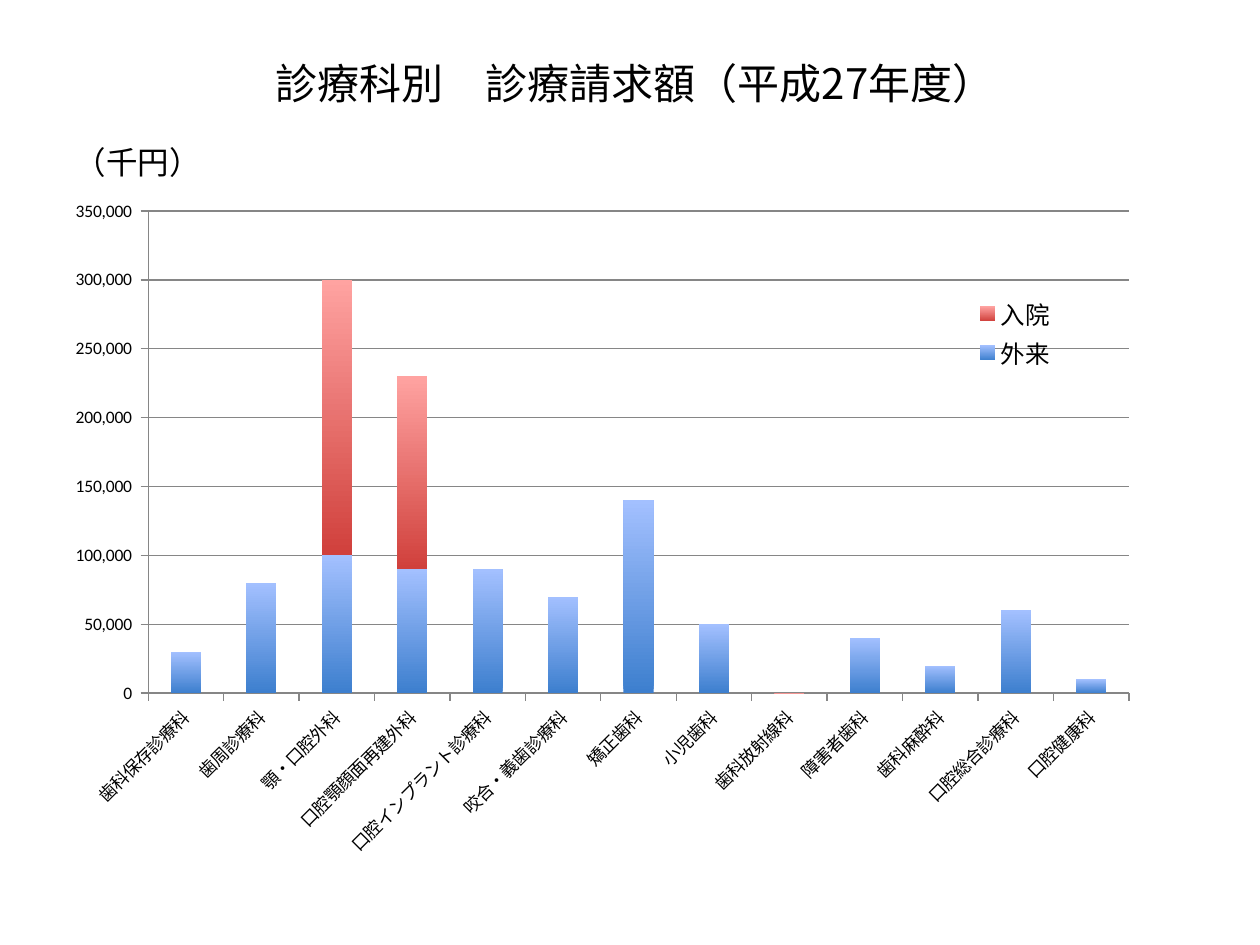
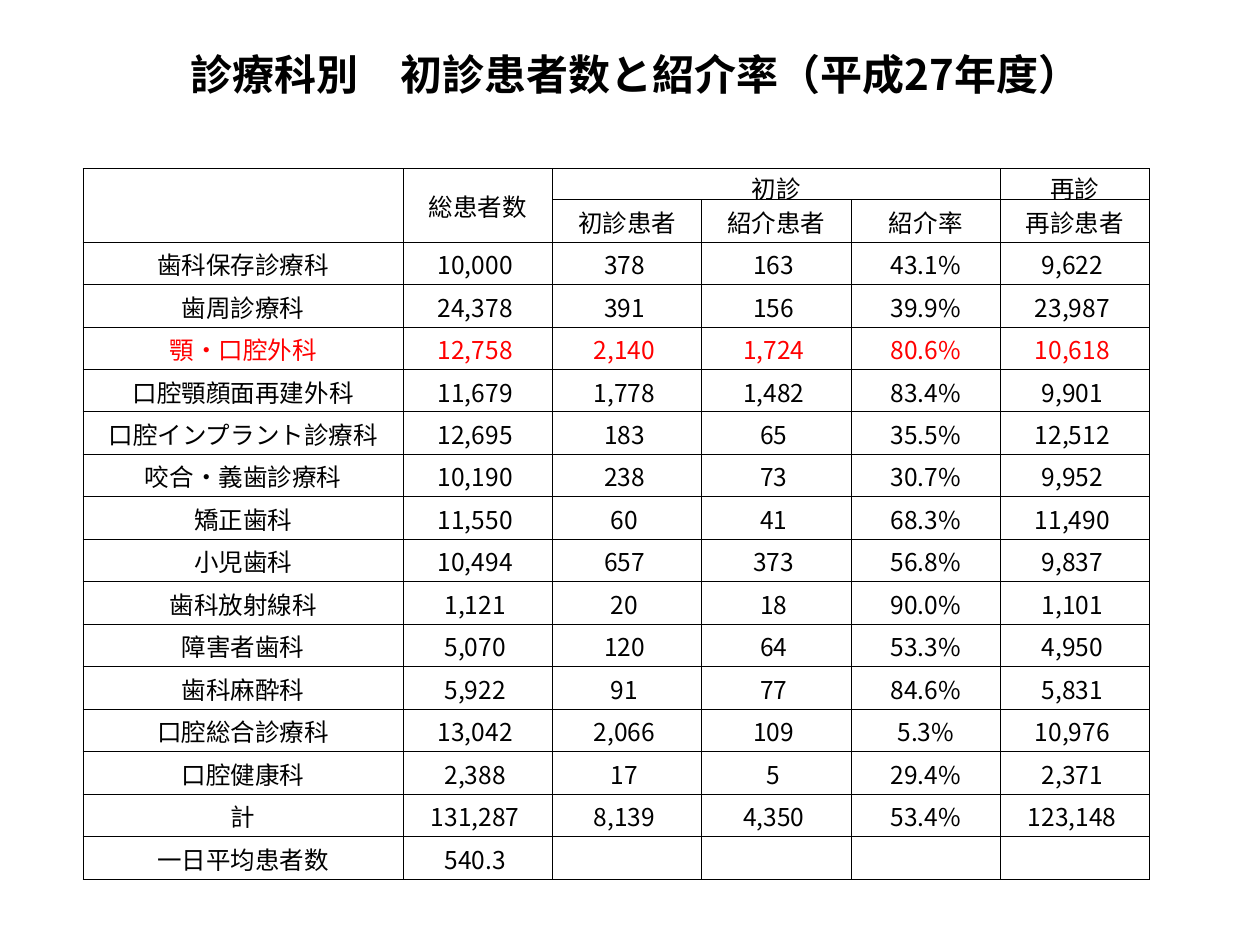
from typing import Any, NamedTuple

from lxml import etree
from pptx import Presentation
from pptx import util as u
from pptx.chart import data as cd
from pptx.dml import color as dml
from pptx.enum import chart as ch
from pptx.enum import text
from pptx.oxml import ns

Pt = u.Pt
JP_FONT = "Noto Sans CJK JP"
BLACK, RED, GRAY = "000000", "FF0000", "868686"
HIGHLIGHTED = "顎・口腔外科"
HEADERS = (
    ("", "総患者数", "初診", "", "", "再診"),
    ("", "", "初診患者", "紹介患者", "紹介率", "再診患者"),
)
MERGES = ((0, 0, 1, 0), (0, 1, 1, 1), (0, 2, 0, 4))


class Label(NamedTuple):
    """A line of text with its place in points."""

    words: str
    left: float
    top: float
    width: float
    height: float
    size: float = 24
    font: str = JP_FONT
    bold: bool = False
    centred: bool = True


class Department(NamedTuple):
    """Patient counts and billing in thousand yen of one department."""

    name: str
    first: int
    referred: int
    repeat: int
    outpatient: int = 0
    inpatient: int = 0


class Series(NamedTuple):
    """A chart series with its gradient from bottom to top."""

    name: str
    values: list[int]
    bottom: str
    top: str


DEPARTMENTS = (
    Department("歯科保存診療科", 378, 163, 9622, 30000),
    Department("歯周診療科", 391, 156, 23987, 80000),
    Department("顎・口腔外科", 2140, 1724, 10618, 100000, 200000),
    Department("口腔顎顔面再建外科", 1778, 1482, 9901, 90000, 140000),
    Department("口腔インプラント診療科", 183, 65, 12512, 90000),
    Department("咬合・義歯診療科", 238, 73, 9952, 70000),
    Department("矯正歯科", 60, 41, 11490, 140000),
    Department("小児歯科", 657, 373, 9837, 50000),
    Department("歯科放射線科", 20, 18, 1101),
    Department("障害者歯科", 120, 64, 4950, 40000),
    Department("歯科麻酔科", 91, 77, 5831, 20000),
    Department("口腔総合診療科", 2066, 109, 10976, 60000),
    Department("口腔健康科", 17, 5, 2371, 10000),
)


def rgb(value: str) -> dml.RGBColor:
    """Turn a hex string into a colour."""
    return dml.RGBColor.from_string(value)


def style_run(r: Any, size: float, font: str, colour: str, bold: bool = False) -> None:
    """Format a run, for East Asian letters as well."""
    r.font.size, r.font.name, r.font.bold = Pt(size), font, bold
    r.font.color.rgb = rgb(colour)
    etree.SubElement(r.font._element, ns.qn("a:ea")).set("typeface", font)


def add_label(slide: Any, label: Label) -> None:
    """Draw a text box."""
    sp = slide.shapes.add_textbox(
        Pt(label.left), Pt(label.top), Pt(label.width), Pt(label.height)
    )
    tf = sp.text_frame
    tf.text = label.words
    tf.word_wrap = label.centred
    tf.auto_size = text.MSO_AUTO_SIZE.SHAPE_TO_FIT_TEXT
    p = tf.paragraphs[0]
    p.alignment = text.PP_ALIGN.CENTER if label.centred else text.PP_ALIGN.LEFT
    style_run(p.runs[0], label.size, label.font, BLACK, label.bold)


def add_title(slide: Any, words: str, top: float, bold: bool = False) -> None:
    """Draw the slide title."""
    add_label(slide, Label(words, 30, top, 666, 36.5, bold=bold))


def set_layout(parent: Any, index: int, inner: bool, box: tuple[float, ...]) -> None:
    """Place a chart part by fractions of the chart area."""
    for old in parent.findall(ns.qn("c:layout")):
        parent.remove(old)
    layout = etree.Element(ns.qn("c:layout"))
    manual = etree.SubElement(layout, ns.qn("c:manualLayout"))
    settings = [("layoutTarget", "inner")] if inner else []
    settings += [("xMode", "edge"), ("yMode", "edge")]
    settings += [(key, str(value)) for key, value in zip("xywh", box)]
    for key, value in settings:
        etree.SubElement(manual, ns.qn(f"c:{key}")).set("val", value)
    parent.insert(index, layout)


def add_billing_chart(slide: Any) -> None:
    """Draw the stacked columns of billing by department."""
    series = (
        Series("外来", [d.outpatient for d in DEPARTMENTS], "3D7FCE", "A3C0FF"),
        Series("入院", [d.inpatient for d in DEPARTMENTS], "D0403C", "FFA3A1"),
    )
    data = cd.CategoryChartData(number_format="#,##0_ ")
    data.categories = [d.name for d in DEPARTMENTS]
    for item in series:
        data.add_series(item.name, item.values)
    chart = slide.shapes.add_chart(
        ch.XL_CHART_TYPE.COLUMN_STACKED, Pt(30), Pt(109), Pt(683.5), Pt(388), data
    ).chart
    chart.has_title = False
    chart.font.size, chart.font.name = Pt(10), "Calibri"
    chart.font.color.rgb = rgb(BLACK)

    plot = chart.plots[0]
    plot.vary_by_categories, plot.overlap, plot.gap_width = False, 100, 150
    for drawn, item in zip(plot.series, series):
        fill = drawn.format.fill
        fill.gradient()
        fill.gradient_angle = 90
        for stop, colour in zip(fill.gradient_stops, (item.bottom, item.top)):
            stop.color.rgb = rgb(colour)

    cat_axis, val_axis = chart.category_axis, chart.value_axis
    val_axis.has_major_gridlines = True
    val_axis.minimum_scale, val_axis.maximum_scale = 0, 350000
    val_axis.major_unit = 50000
    val_axis.tick_labels.number_format = "#,##0_ "
    val_axis.tick_labels.number_format_is_linked = False
    for axis in (cat_axis, val_axis):
        axis.major_tick_mark = ch.XL_TICK_MARK.OUTSIDE
        axis.tick_labels.font.size = Pt(10)
    cat_axis._element.txPr.bodyPr.set("rot", "-2700000")
    for part in (cat_axis, val_axis, val_axis.major_gridlines):
        part.format.line.color.rgb = rgb(GRAY)
        part.format.line.width = Pt(0.75)

    chart.has_legend = True
    legend = chart.legend
    legend.position = ch.XL_LEGEND_POSITION.RIGHT
    legend.include_in_layout = False
    legend.font.size, legend.font.name = Pt(14), JP_FONT
    set_layout(chart._chartSpace.chart.plotArea, 0, True, (0.08, 0.03, 0.82, 0.71))
    set_layout(legend._element, 1, False, (0.77, 0.15, 0.07, 0.12))


def patient_row(d: Department) -> tuple[str, ...]:
    """Give the table texts of one department."""
    return (
        d.name,
        f"{d.first + d.repeat:,} ",
        f"{d.first:,} ",
        f"{d.referred:,} ",
        f"{d.referred / d.first:.1%}",
        f"{d.repeat:,} ",
    )


def set_borders(cell: Any) -> None:
    """Rule all four sides of a cell."""
    tc_pr = cell._tc.get_or_add_tcPr()
    for index, side in enumerate("LRTB"):
        ln = etree.Element(ns.qn(f"a:ln{side}"), w=str(Pt(0.5)))
        solid = etree.SubElement(ln, ns.qn("a:solidFill"))
        etree.SubElement(solid, ns.qn("a:srgbClr")).set("val", BLACK)
        tc_pr.insert(index, ln)


def fill_cell(cell: Any, words: str, colour: str) -> None:
    """Write and format one table cell."""
    cell.fill.background()
    set_borders(cell)
    cell.margin_left = cell.margin_right = cell.margin_top = Pt(0.72)
    cell.margin_bottom = 0
    cell.vertical_anchor = text.MSO_ANCHOR.MIDDLE
    cell.text_frame.text = words
    p = cell.text_frame.paragraphs[0]
    p.alignment = text.PP_ALIGN.CENTER
    for r in p.runs:
        style_run(r, 14, JP_FONT, colour)
    if not words:
        p._p.get_or_add_endParaRPr().set("sz", "1400")


def add_patient_table(slide: Any) -> None:
    """Draw the table of patients and referral rates."""
    total = Department(
        "計",
        sum(d.first for d in DEPARTMENTS),
        sum(d.referred for d in DEPARTMENTS),
        sum(d.repeat for d in DEPARTMENTS),
    )
    rows = [*HEADERS, *map(patient_row, (*DEPARTMENTS, total))]
    rows.append(("一日平均患者数", "540.3 ", "", "", "", ""))
    frame = slide.shapes.add_table(
        len(rows), len(HEADERS[0]), Pt(47.5), Pt(96.5), Pt(609.5), Pt(406)
    )
    table = frame.table
    table.first_row = table.horz_banding = False
    for index, column in enumerate(table.columns):
        column.width = Pt(85.3 if index else 183)
    for index, (row, words) in enumerate(zip(table.rows, rows)):
        row.height = Pt(24.27 if index else 11.5)
        colour = RED if words[0] == HIGHLIGHTED else BLACK
        for cell, word in zip(row.cells, words):
            fill_cell(cell, word, colour)
    for top, left, bottom, right in MERGES:
        table.cell(top, left).merge(table.cell(bottom, right))
    frame.height = Pt(406)


def main() -> None:
    """Build and save both slides."""
    prs = Presentation()
    prs.slide_width, prs.slide_height = Pt(720), Pt(540)
    billing, patients = (prs.slides.add_slide(prs.slide_layouts[6]) for _ in range(2))

    add_title(billing, "診療科別　診療請求額（平成27年度）", 29.5)
    add_label(
        billing, Label("（千円）", 35.5, 78, 87, 29, 18, "Arial", centred=False)
    )
    add_billing_chart(billing)

    add_title(patients, "診療科別　初診患者数と紹介率（平成27年度）", 24, bold=True)
    add_patient_table(patients)
    prs.save("out.pptx")


if __name__ == "__main__":
    main()
